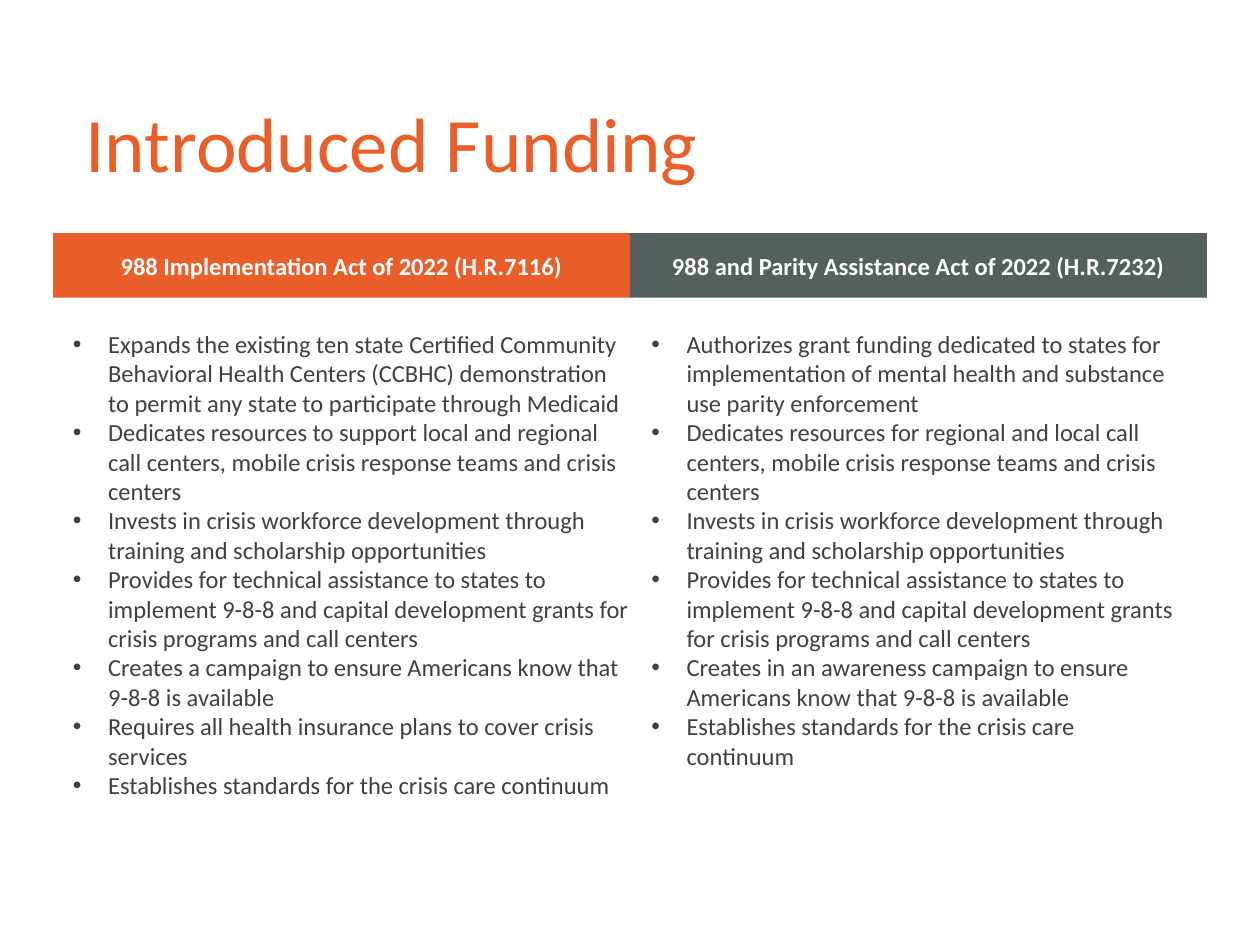
"""Builds the slide that compares two introduced 988 funding acts."""
from lxml import etree
from pptx import Presentation
from pptx.dml.color import RGBColor
from pptx.enum.shapes import MSO_SHAPE
from pptx.enum.text import MSO_ANCHOR, PP_ALIGN
from pptx.oxml.ns import qn
from pptx.util import Cm, Pt

RECTANGLE = MSO_SHAPE.RECTANGLE
MIDDLE, TOP = MSO_ANCHOR.MIDDLE, MSO_ANCHOR.TOP
LEFT, CENTER = PP_ALIGN.LEFT, PP_ALIGN.CENTER

TITLE = "Introduced Funding"
ACTS = [
    {
        "name": "988 Implementation Act of 2022 (H.R.7116)",
        "color": "EA5E29",
        "left": 1.47,
        "width": 11.23,
        "height": 9.78,
        "points": [
            "Expands the existing ten state Certified Community Behavioral Health Centers "
            "(CCBHC) demonstration to permit any state to participate through Medicaid",
            "Dedicates resources to support local and regional call centers, mobile crisis "
            "response teams and crisis centers",
            "Invests in crisis workforce development through training and scholarship "
            "opportunities",
            "Provides for technical assistance to states to implement 9-8-8 and capital "
            "development grants for crisis programs and call centers",
            "Creates a campaign to ensure Americans know that 9-8-8 is available",
            "Requires all health insurance plans to cover crisis services",
            "Establishes standards for the crisis care continuum",
        ],
    },
    {
        "name": "988 and Parity Assistance Act of 2022 (H.R.7232)",
        "color": "53605F",
        "left": 13.13,
        "width": 10.8,
        "height": 9.17,
        "points": [
            "Authorizes grant funding dedicated to states for implementation of mental "
            "health and substance use parity enforcement",
            "Dedicates resources for regional and local call centers, mobile crisis "
            "response teams and crisis centers",
            "Invests in crisis workforce development through training and scholarship "
            "opportunities",
            "Provides for technical assistance to states to implement 9-8-8 and capital "
            "development grants for crisis programs and call centers",
            "Creates in an awareness campaign to ensure Americans know that 9-8-8 is available",
            "Establishes standards for the crisis care continuum",
        ],
    },
]

THEME = {
    "title": {"name": "Calibri", "size": Pt(44), "bold": False, "color": "EA5E29"},
    "header": {"name": "Calibri", "size": Pt(14), "bold": True, "color": "FFFFFF"},
    "body": {"name": "Calibri", "size": Pt(14), "bold": False, "color": "404040"},
}
PAGE_WIDTH, PAGE_HEIGHT = 25.4, 19.05
MARGIN, HEADER_TOP, HEADER_HEIGHT = 1.07, 4.7, 1.3
BODY_TOP, BODY_INSET, INDENT = 6.53, 0.1, 0.71


def apply(target, values):
    for name, value in values.items():
        if name == "color":
            target.color.rgb = RGBColor.from_string(value)
        else:
            setattr(target, name, value)


def write(para, text, style, align):
    para.alignment = align
    span = para.add_run()
    span.text = text
    apply(span.font, THEME[style])


def add_bullet(para):
    properties = para._p.get_or_add_pPr()
    properties.set("marL", str(Cm(INDENT)))
    properties.set("indent", str(-Cm(INDENT)))
    etree.SubElement(properties, qn("a:buFont")).set("typeface", "Arial")
    etree.SubElement(properties, qn("a:buChar")).set("char", "•")


def add_title(page):
    title = page.shapes.title
    apply(title, {"left": Cm(1.47), "top": Cm(1.02), "width": Cm(22.48), "height": Cm(3.68)})
    title.text_frame.vertical_anchor = MIDDLE
    write(title.text_frame.paragraphs[0], TITLE, "title", LEFT)


def add_header(page, act, column):
    width = (PAGE_WIDTH - 2 * MARGIN) / len(ACTS)
    header = page.shapes.add_shape(
        RECTANGLE, Cm(MARGIN + column * width), Cm(HEADER_TOP), Cm(width), Cm(HEADER_HEIGHT))
    header.shadow.inherit = False
    header.fill.solid()
    header.fill.fore_color.rgb = RGBColor.from_string(act["color"])
    header.line.fill.background()
    apply(header.text_frame, {"word_wrap": True, "vertical_anchor": MIDDLE})
    write(header.text_frame.paragraphs[0], act["name"], "header", CENTER)


def add_points(page, act):
    box = page.shapes.add_textbox(
        Cm(act["left"]), Cm(BODY_TOP), Cm(act["width"]), Cm(act["height"]))
    frame = box.text_frame
    apply(frame, {
        "word_wrap": True, "vertical_anchor": TOP, "margin_left": 0, "margin_right": 0,
        "margin_top": Cm(BODY_INSET), "margin_bottom": Cm(BODY_INSET),
    })
    for index, point in enumerate(act["points"]):
        para = frame.add_paragraph() if index else frame.paragraphs[0]
        add_bullet(para)
        write(para, point, "body", LEFT)


def main():
    deck = Presentation()
    apply(deck, {"slide_width": Cm(PAGE_WIDTH), "slide_height": Cm(PAGE_HEIGHT)})
    page = deck.slides.add_slide(deck.slide_layouts[5])
    add_title(page)
    for column, act in enumerate(ACTS):
        add_header(page, act, column)
        add_points(page, act)
    deck.save("out.pptx")


if __name__ == "__main__":
    main()
